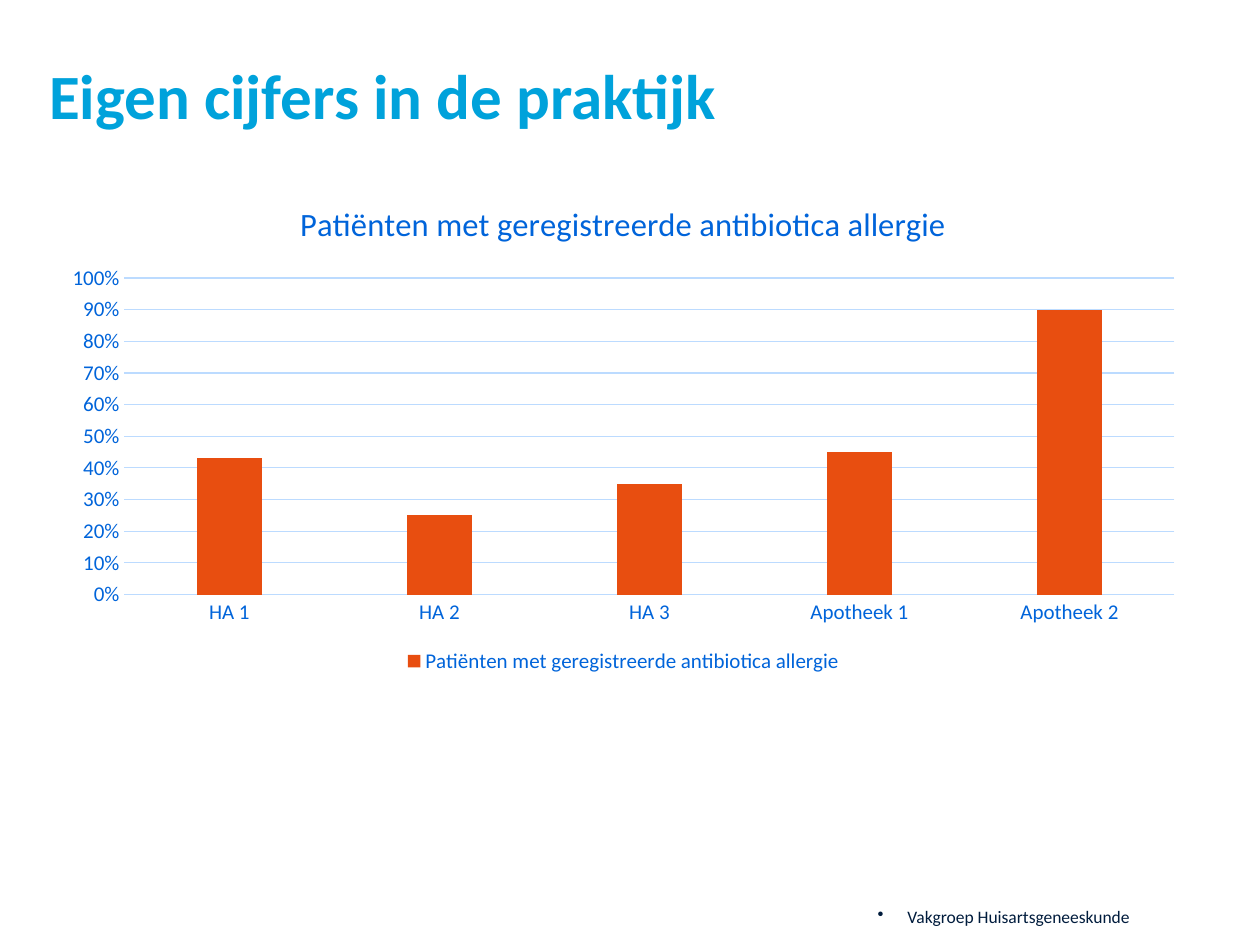
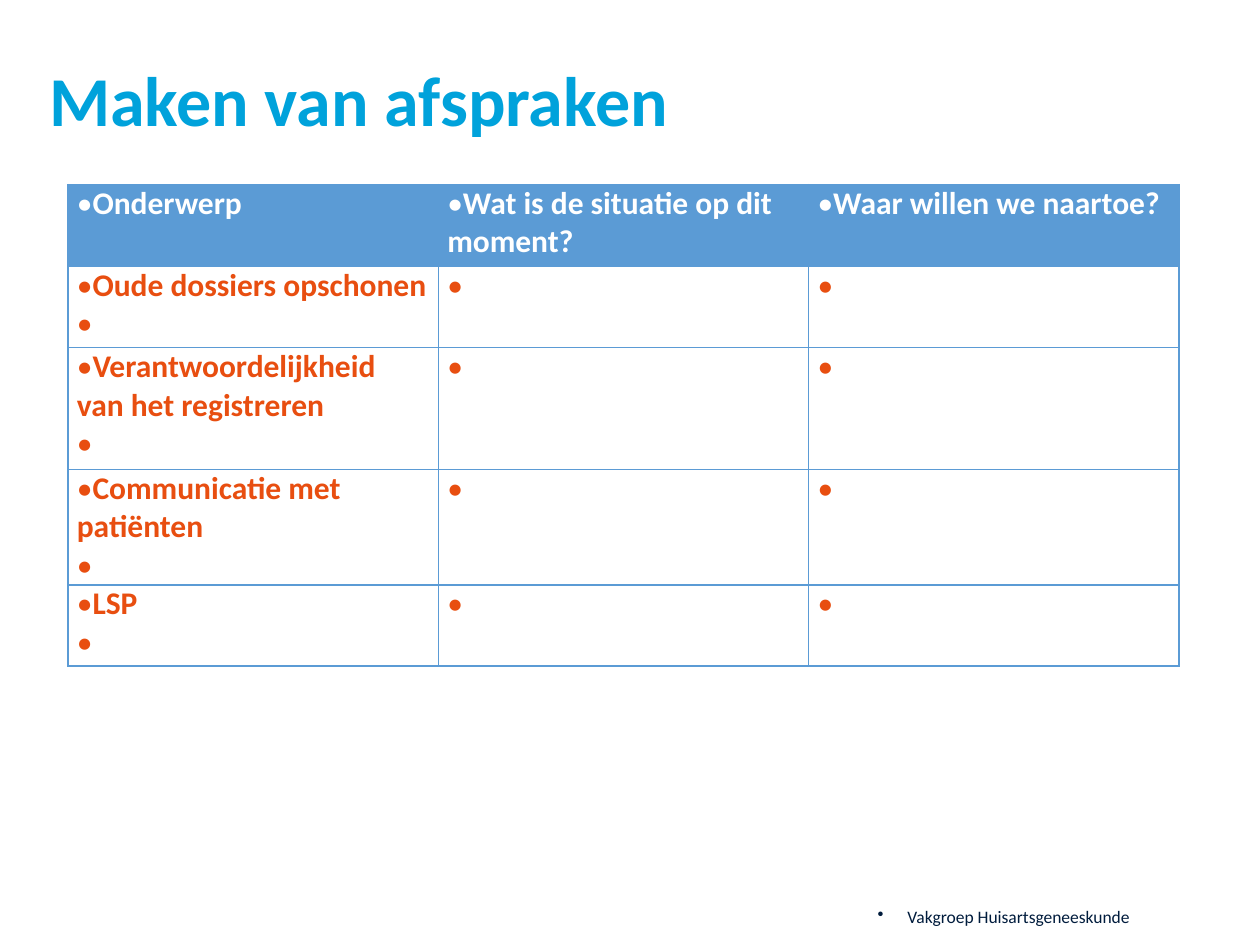
"""Build two slides on allergy registration: practice figures and agreements."""
from dataclasses import dataclass

from lxml import etree
from pptx import Presentation
from pptx.chart.data import CategoryChartData
from pptx.dml.color import RGBColor
from pptx.enum.chart import XL_CHART_TYPE, XL_LEGEND_POSITION, XL_TICK_MARK
from pptx.enum.text import MSO_ANCHOR, MSO_AUTO_SIZE, PP_ALIGN
from pptx.oxml.ns import qn
from pptx.slide import Slide
from pptx.util import Cm, Length, Pt

COLUMNS = XL_CHART_TYPE.COLUMN_CLUSTERED
LEGEND_BOTTOM = XL_LEGEND_POSITION.BOTTOM
NO_TICK = XL_TICK_MARK.NONE
TOP = MSO_ANCHOR.TOP
NO_AUTOFIT = MSO_AUTO_SIZE.NONE
LEFT = PP_ALIGN.LEFT
RIGHT = PP_ALIGN.RIGHT
TITLE_ONLY = 5


@dataclass(frozen=True)
class Theme:
    font: str = "Calibri"
    title: str = "00A2DB"
    ink: str = "001C3D"
    chart_text: str = "0064DA"
    grid: str = "BCDBFF"
    accent: str = "E84E10"
    table: str = "5B9BD5"
    white: str = "FFFFFF"
    chart_slide_title_size: float = 36
    table_slide_title_size: float = 40
    footer_size: float = 10
    label_size: float = 12
    table_size: float = 18
    chart_title_size: float = 18.6
    rule_width: float = 0.75
    border_width: float = 1


@dataclass(frozen=True)
class Box:
    left: Length
    top: Length
    width: Length
    height: Length

    def bounds(self) -> tuple[Length, Length, Length, Length]:
        """Return the four lengths in drawing order."""
        return self.left, self.top, self.width, self.height


@dataclass(frozen=True)
class PracticeFigure:
    label: str
    share: float


@dataclass(frozen=True)
class TableRow:
    texts: tuple[str, str, str]
    height: Length


THEME = Theme()
TITLE_BOX = Box(Cm(0.99), Cm(1.14), Cm(23.14), Cm(2.11))
CHART_BOX = Box(Cm(1), Cm(3.6), Cm(23.14), Cm(10.08))
TABLE_BOX = Box(Cm(1.37), Cm(3.72), Cm(22.4), Cm(9.69))
FOOTER_BOX = Box(Cm(15.28), Cm(17.55), Cm(7.49), Cm(1.02))

CHART_TITLE = "Patiënten met geregistreerde antibiotica allergie"
FIGURES = (
    PracticeFigure("HA 1", 0.43),
    PracticeFigure("HA 2", 0.25),
    PracticeFigure("HA 3", 0.35),
    PracticeFigure("Apotheek 1", 0.45),
    PracticeFigure("Apotheek 2", 0.9),
)
EMPTY = " "
HEADER = TableRow(
    ("Onderwerp", "Wat is de situatie op dit moment?", "Waar willen we naartoe?"),
    Cm(1.65),
)
TOPICS = (
    ("Oude dossiers opschonen", Cm(1.64)),
    ("Verantwoordelijkheid van het registreren", Cm(2.45)),
    ("Communicatie met patiënten", Cm(2.33)),
    ("LSP", Cm(1.64)),
)
ROWS = (HEADER,) + tuple(
    TableRow((f"{topic}\n{EMPTY}", EMPTY, EMPTY), height) for topic, height in TOPICS
)


def color(value: str) -> RGBColor:
    """Turn a hexadecimal value into a colour."""
    return RGBColor.from_string(value)


def style_font(font, size: float, value: str, bold: bool = False) -> None:
    """Give a font the shared typeface with its size and colour."""
    font.name = THEME.font
    font.size = Pt(size)
    font.bold = bold
    font.color.rgb = color(value)


def add_run(paragraph, text: str, size: float, value: str, bold: bool = False) -> None:
    """Append one formatted run."""
    run = paragraph.add_run()
    run.text = text
    style_font(run.font, size, value, bold)


def add_bullet(paragraph, hanging: Length, typeface: str = "") -> None:
    """Put a round bullet before a paragraph."""
    properties = paragraph._p.get_or_add_pPr()
    properties.set("marL", str(int(hanging)))
    properties.set("indent", str(-int(hanging)))
    if typeface:
        etree.SubElement(properties, qn("a:buFont")).set("typeface", typeface)
    etree.SubElement(properties, qn("a:buChar")).set("char", "•")


def clear_margins(text_frame) -> None:
    """Remove the insets and keep text at the top."""
    text_frame.margin_left = text_frame.margin_right = 0
    text_frame.margin_top = text_frame.margin_bottom = 0
    text_frame.vertical_anchor = TOP
    text_frame.auto_size = NO_AUTOFIT
    text_frame.word_wrap = True


def add_footer(slide: Slide) -> None:
    """Add the department name at the bottom right."""
    shape = slide.shapes.add_textbox(*FOOTER_BOX.bounds())
    clear_margins(shape.text_frame)
    paragraph = shape.text_frame.paragraphs[0]
    add_bullet(paragraph, Cm(0.6))
    paragraph.alignment = RIGHT
    paragraph.line_spacing = Pt(32)
    add_run(paragraph, "Vakgroep Huisartsgeneeskunde", THEME.footer_size, THEME.ink)


def add_slide(presentation, title: str, title_size: float) -> Slide:
    """Add a slide with its title and footer."""
    slide = presentation.slides.add_slide(presentation.slide_layouts[TITLE_ONLY])
    shape = slide.shapes.title
    shape.left, shape.top, shape.width, shape.height = TITLE_BOX.bounds()
    clear_margins(shape.text_frame)
    paragraph = shape.text_frame.paragraphs[0]
    paragraph.alignment = LEFT
    add_run(paragraph, title, title_size, THEME.title, bold=True)
    add_footer(slide)
    return slide


def style_rule(line) -> None:
    """Draw an axis or grid line in the grid colour."""
    line.color.rgb = color(THEME.grid)
    line.width = Pt(THEME.rule_width)


def add_figures_chart(slide: Slide) -> None:
    """Add the column chart of registered allergies."""
    data = CategoryChartData(number_format="0%")
    data.categories = [figure.label for figure in FIGURES]
    data.add_series(CHART_TITLE, [figure.share for figure in FIGURES])
    chart = slide.shapes.add_chart(COLUMNS, *CHART_BOX.bounds(), data).chart
    style_font(chart.font, THEME.footer_size, THEME.ink)

    chart.has_title = True
    chart.chart_title.include_in_layout = False
    title = chart.chart_title.text_frame.paragraphs[0]
    add_run(title, CHART_TITLE, THEME.chart_title_size, THEME.chart_text)
    chart.has_legend = True
    chart.legend.position = LEGEND_BOTTOM
    chart.legend.include_in_layout = False
    style_font(chart.legend.font, THEME.label_size, THEME.chart_text)

    for axis in (chart.category_axis, chart.value_axis):
        axis.major_tick_mark = axis.minor_tick_mark = NO_TICK
        style_font(axis.tick_labels.font, THEME.label_size, THEME.chart_text)
    style_rule(chart.category_axis.format.line)
    value_axis = chart.value_axis
    value_axis.minimum_scale, value_axis.maximum_scale = 0, 1
    value_axis.major_unit = 0.1
    value_axis.tick_labels.number_format = "0%"
    value_axis.tick_labels.number_format_is_linked = False
    value_axis.format.line.fill.background()
    style_rule(value_axis.major_gridlines.format.line)

    plot = chart.plots[0]
    plot.gap_width, plot.overlap = 219, -27
    plot.vary_by_categories = False
    fill = plot.series[0].format.fill
    fill.solid()
    fill.fore_color.rgb = color(THEME.accent)


def add_borders(cell) -> None:
    """Outline all four sides of a cell."""
    properties = cell._tc.get_or_add_tcPr()
    for side in ("L", "R", "T", "B"):
        line = etree.SubElement(properties, qn(f"a:ln{side}"))
        line.set("w", str(int(Pt(THEME.border_width))))
        solid = etree.SubElement(line, qn("a:solidFill"))
        etree.SubElement(solid, qn("a:srgbClr")).set("val", THEME.table)


def fill_cell(cell, text: str, background: str, text_color: str) -> None:
    """Write one bulleted paragraph per line in a cell."""
    cell.margin_left = cell.margin_right = Cm(0.18)
    cell.margin_top = cell.margin_bottom = 0
    add_borders(cell)
    cell.fill.solid()
    cell.fill.fore_color.rgb = color(background)
    frame = cell.text_frame
    for index, line in enumerate(text.split("\n")):
        paragraph = frame.add_paragraph() if index else frame.paragraphs[0]
        add_bullet(paragraph, Cm(0), THEME.font)
        add_run(paragraph, line, THEME.table_size, text_color, bold=True)


def add_agreements_table(slide: Slide) -> None:
    """Add the table in which agreements are noted."""
    column_count = len(HEADER.texts)
    table = slide.shapes.add_table(len(ROWS), column_count, *TABLE_BOX.bounds()).table
    for column in table.columns:
        column.width = TABLE_BOX.width // column_count
    for row_index, row in enumerate(ROWS):
        table.rows[row_index].height = row.height
        is_header = row is HEADER
        background = THEME.table if is_header else THEME.white
        text_color = THEME.white if is_header else THEME.accent
        for column_index, text in enumerate(row.texts):
            fill_cell(table.cell(row_index, column_index), text, background, text_color)


def main() -> None:
    """Create and save the presentation."""
    presentation = Presentation()
    presentation.slide_width, presentation.slide_height = Cm(25.4), Cm(19.05)
    chart_slide = add_slide(
        presentation, "Eigen cijfers in de praktijk", THEME.chart_slide_title_size
    )
    add_figures_chart(chart_slide)
    table_slide = add_slide(
        presentation, "Maken van afspraken", THEME.table_slide_title_size
    )
    add_agreements_table(table_slide)
    presentation.save("out.pptx")


if __name__ == "__main__":
    main()
